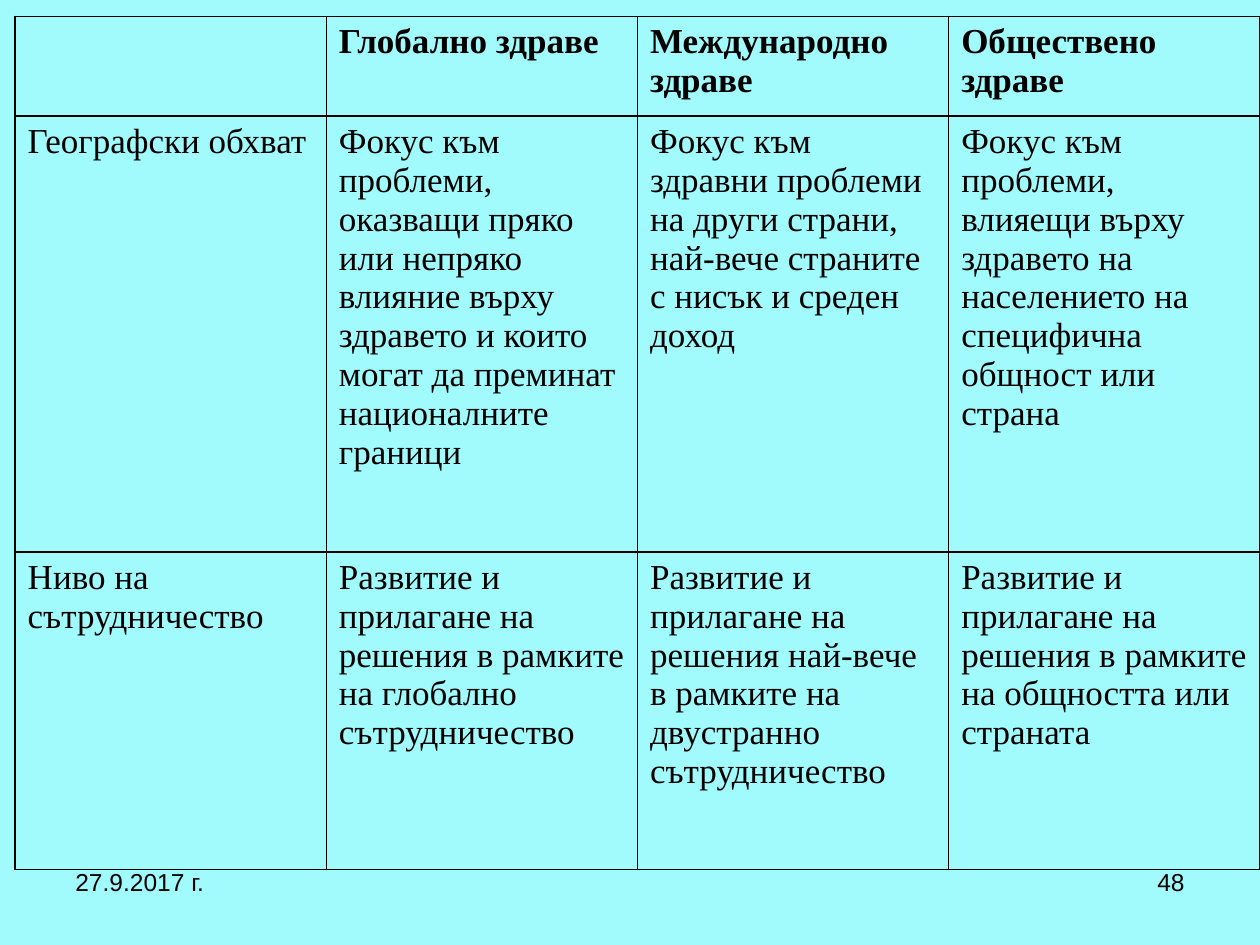
"""Build a slide comparing global, international and public health."""
from lxml import etree
from pptx import Presentation
from pptx.dml.color import RGBColor
from pptx.enum import text
from pptx.oxml import ns
from pptx.util import Inches, Pt

AQUA = RGBColor(0xA1, 0xFB, 0xFD)
BLACK = RGBColor(0, 0, 0)

ROWS = [
    ["", "Глобално здраве", "Международно здраве", "Обществено здраве"],
    [
        "Географски обхват",
        "Фокус към проблеми,  оказващи пряко или непряко влияние върху здравето "
        "и които могат да преминат националните граници",
        "Фокус към здравни проблеми на други страни, най-вече страните "
        "с нисък и среден доход",
        "Фокус към проблеми,  влияещи върху здравето на населението "
        "на специфична общност или страна",
    ],
    [
        "Ниво на сътрудничество",
        "Развитие и прилагане на решения в рамките на глобално сътрудничество",
        "Развитие и прилагане на решения най-вече в рамките на двустранно сътрудничество",
        "Развитие и прилагане на решения в рамките на общността или страната",
    ],
]
ROW_HEIGHTS = [0.79, 3.46, 2.52]


def style_runs(paragraph, font_name, size, bold=False):
    for run in paragraph.runs:
        run.font.name = font_name
        run.font.size = Pt(size)
        run.font.bold = bold
        run.font.color.rgb = BLACK


def add_borders(cell):
    properties = cell._tc.get_or_add_tcPr()
    for position, side in enumerate(("lnL", "lnR", "lnT", "lnB")):
        line = etree.Element(ns.qn(f"a:{side}"), w=str(Pt(1)))
        fill = etree.SubElement(line, ns.qn("a:solidFill"))
        etree.SubElement(fill, ns.qn("a:srgbClr"), val=str(BLACK))
        properties.insert(position, line)


deck = Presentation()
deck.slide_width, deck.slide_height = Inches(10), Inches(7.5)
slide = deck.slides.add_slide(deck.slide_layouts[6])
slide.background.fill.solid()
slide.background.fill.fore_color.rgb = AQUA

comparison = slide.shapes.add_table(
    3, 4, Inches(0.12), Inches(0.13), Inches(9.88), Inches(6.77)
).table
comparison.horz_banding = False
comparison.first_row = False
for column in comparison.columns:
    column.width = Inches(2.47)
for row, height in zip(comparison.rows, ROW_HEIGHTS):
    row.height = Inches(height)

for row_index, row_texts in enumerate(ROWS):
    for column_index, wording in enumerate(row_texts):
        cell = comparison.cell(row_index, column_index)
        cell.fill.background()
        add_borders(cell)
        cell.text_frame.text = wording
        style_runs(cell.text_frame.paragraphs[0], "Times New Roman", 20, row_index == 0)

for wording, left, alignment in (
    ("27.9.2017 г.", 0.5, text.PP_ALIGN.LEFT),
    ("48", 7.17, text.PP_ALIGN.RIGHT),
):
    footer = slide.shapes.add_textbox(
        Inches(left), Inches(6.83), Inches(2.33), Inches(0.52)
    ).text_frame
    footer.word_wrap = True
    footer.text = wording
    footer.paragraphs[0].alignment = alignment
    style_runs(footer.paragraphs[0], "Arial", 14)

deck.save("out.pptx")
